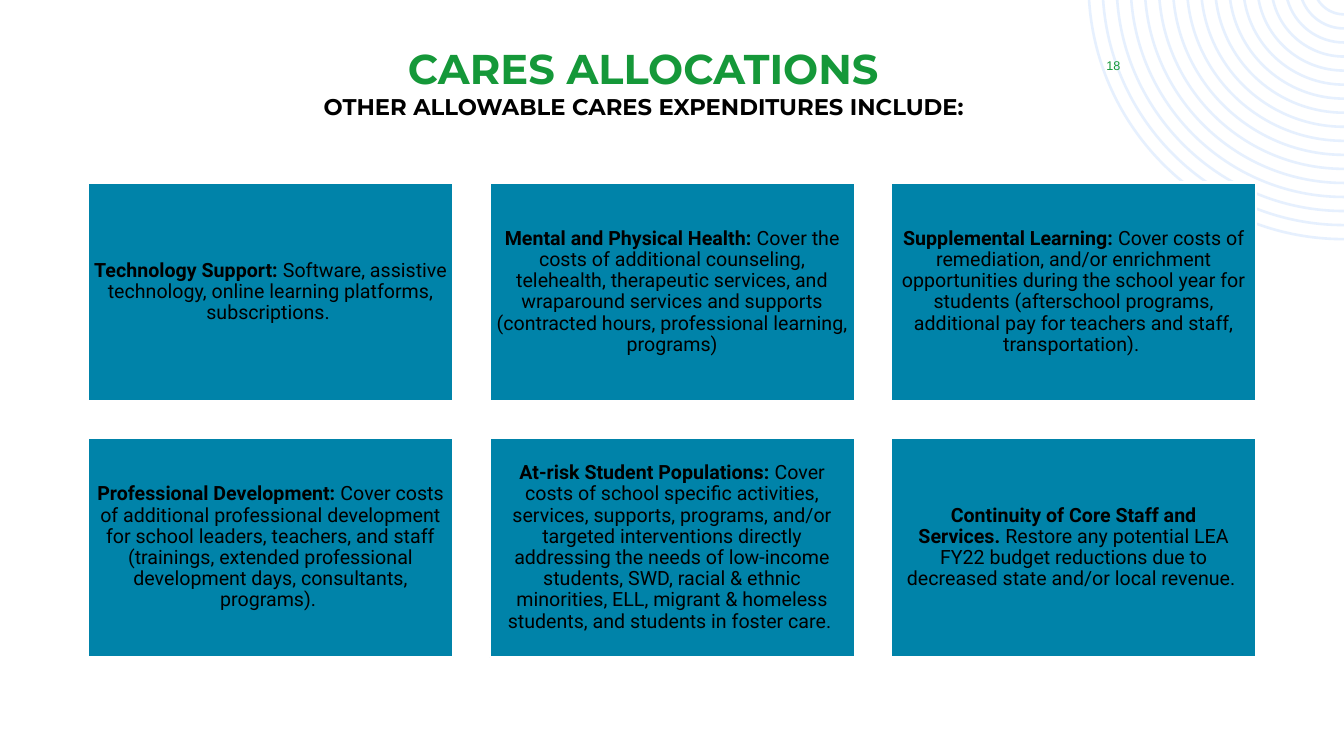
import math

from lxml import etree
from pptx import Presentation
from pptx.dml.color import RGBColor
from pptx.enum.shapes import MSO_SHAPE
from pptx.enum.text import MSO_ANCHOR, PP_ALIGN
from pptx.oxml.ns import qn
from pptx.util import Cm, Pt

RECT = MSO_SHAPE.RECTANGLE
CENTER = PP_ALIGN.CENTER
TOP, MIDDLE = MSO_ANCHOR.TOP, MSO_ANCHOR.MIDDLE
NBSP = chr(160)

WIDTH, HEIGHT = 33.87, 19.05
GREEN, BLUE, PALE = "159839", "0083A9", "E6F0FE"
BLACK, WHITE = "000000", "FFFFFF"

EXPENDITURES = [
    ("Technology Support:",
     "Software, assistive technology, online learning platforms, "
     f"subscriptions.{NBSP}"),
    ("Mental and Physical Health:",
     "Cover the costs of additional counseling, telehealth, therapeutic services, "
     "and wraparound services and supports (contracted hours, professional "
     "learning, programs)"),
    ("Supplemental Learning:",
     "Cover costs of remediation, and/or enrichment opportunities during the "
     "school year for students (afterschool programs, additional pay for teachers "
     f"and staff, transportation).{NBSP}"),
    ("Professional Development:",
     "Cover costs of additional professional development for school leaders, "
     "teachers, and staff (trainings, extended professional development days, "
     f"consultants, programs).{NBSP}"),
    ("At-risk Student Populations:",
     "Cover costs of school specific activities, services, supports, programs, "
     "and/or targeted interventions directly addressing the needs of low-income "
     f"students, SWD, racial & ethnic minorities,{NBSP}ELL, migrant & homeless "
     f"students, and students in foster care.{NBSP}"),
    ("Continuity of Core Staff and Services.",
     "Restore any potential LEA FY22 budget reductions due to decreased state "
     "and/or local revenue. "),
]


def color(value):
    return RGBColor.from_string(value)


def add_run(p, text, size=14, font="Roboto", fill=BLACK, bold=False):
    r = p.add_run()
    r.text = text
    r.font.size = Pt(size)
    r.font.name = font
    r.font.bold = bold
    r.font.color.rgb = color(fill)


def arc_points(cx, cy, r):
    start, end = math.asin(-cy / r), math.pi / 2
    pull = 4 / 3 * math.tan((end - start) / 4)

    def at(angle, shift):
        x = -math.cos(angle) + shift * math.sin(angle)
        y = math.sin(angle) + shift * math.cos(angle)
        return Cm(cx + r * x), Cm(cy + r * y)

    return [at(start, 0), at(start, pull), at(end, -pull), at(end, 0)]


def bend(line, points, left, top):
    curve = etree.Element(qn("a:cubicBezTo"))
    for x, y in points:
        etree.SubElement(curve, qn("a:pt"), x=str(x - left), y=str(y - top))
    line.getparent().replace(line, curve)


class Page:
    def __init__(self, prs):
        self.s = prs.slides.add_slide(prs.slide_layouts[6])

    def frame(self, sp, anchor, inset_x, inset_y):
        tf = sp.text_frame
        tf.word_wrap = True
        tf.vertical_anchor = anchor
        tf.margin_left = tf.margin_right = Cm(inset_x)
        tf.margin_top = tf.margin_bottom = Cm(inset_y)
        p = tf.paragraphs[0]
        p.alignment = CENTER
        return p

    def text(self, x, y, w, h, anchor):
        sp = self.s.shapes.add_textbox(Cm(x), Cm(y), Cm(w), Cm(h))
        return self.frame(sp, anchor, 0.25, 0.13)

    def card(self, x, y, w, h, heading, body):
        sp = self.s.shapes.add_shape(RECT, Cm(x), Cm(y), Cm(w), Cm(h))
        sp.shadow.inherit = False
        sp.fill.solid()
        sp.fill.fore_color.rgb = color(BLUE)
        sp.line.color.rgb = color(WHITE)
        sp.line.width = Pt(1.5)
        p = self.frame(sp, MIDDLE, 0.15, 0.15)
        p.line_spacing = 0.9
        add_run(p, heading + NBSP, bold=True)
        add_run(p, body)

    def rings(self, cx, cy, radius, step, thickness, count):
        arcs = []
        for k in range(count):
            outer = radius - k * step
            arcs.append(arc_points(cx, cy, outer))
            arcs.append(arc_points(cx, cy, outer - thickness)[::-1])
        builder = self.s.shapes.build_freeform(*arcs[0][0])
        for outer, inner in zip(arcs[::2], arcs[1::2]):
            if outer is not arcs[0]:
                builder.move_to(*outer[0])
            corners = [outer[-1], inner[0], inner[-1]]
            builder.add_line_segments(corners, close=True)
        sp = builder.convert_to_shape()
        lines = list(sp.element.iter(qn("a:lnTo")))
        sides = [line for i, line in enumerate(lines) if i % 3 != 1]
        for line, points in zip(sides, arcs):
            bend(line, points[1:], sp.left, sp.top)
        sp.shadow.inherit = False
        sp.fill.solid()
        sp.fill.fore_color.rgb = color(PALE)
        sp.line.fill.background()


def main():
    prs = Presentation()
    prs.slide_width, prs.slide_height = Cm(WIDTH), Cm(HEIGHT)
    page = Page(prs)
    page.rings(WIDTH, -0.41, 6.47, 0.354, 0.065, 17)

    p = page.text(5.1, 0.95, 22.23, 2.13, TOP)
    add_run(p, "CARES ALLOCATIONS", 29.7, "Montserrat", GREEN, True)
    p.add_line_break()
    add_run(p, "OTHER ALLOWABLE CARES EXPENDITURES INCLUDE:", 16.2,
            "Montserrat", BLACK, True)

    p = page.text(27.03, 1.27, 2.06, 0.76, MIDDLE)
    add_run(p, "18", 9, "Arial", GREEN)

    for i, (heading, body) in enumerate(EXPENDITURES):
        row, col = divmod(i, 3)
        page.card(2.22 + col * 10.12, 4.6 + row * 6.44, 9.2, 5.52, heading, body)

    prs.save("out.pptx")


if __name__ == "__main__":
    main()
